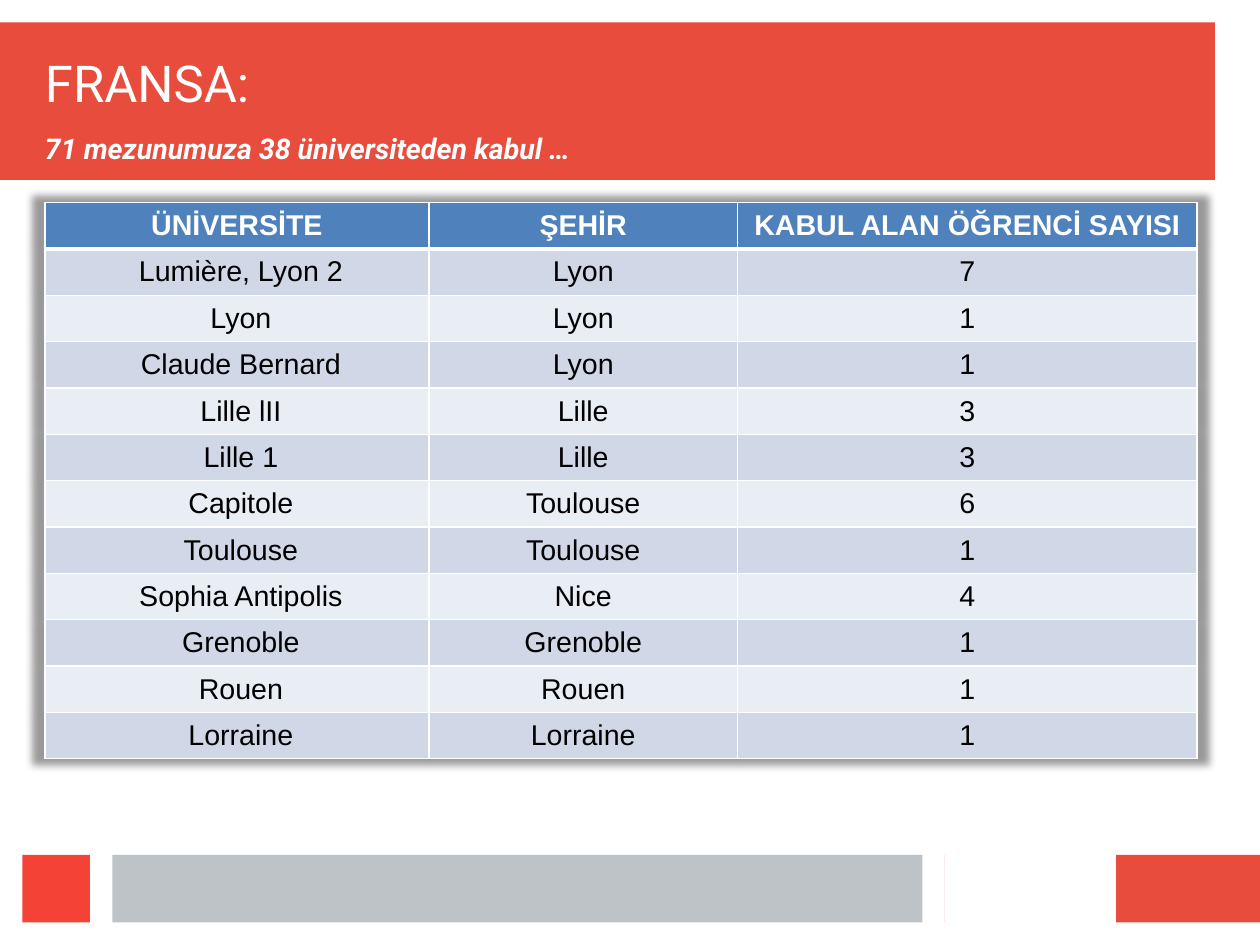
from dataclasses import dataclass

from lxml.etree import SubElement
from pptx import Presentation
from pptx.dml.color import RGBColor
from pptx.enum.shapes import MSO_SHAPE
from pptx.enum.text import MSO_ANCHOR, MSO_AUTO_SIZE, PP_ALIGN
from pptx.oxml.ns import qn
from pptx.util import Cm, Pt

COUNTRY = "FRANSA:"
SUMMARY = "71 mezunumuza 38 üniversiteden kabul …"
HEADINGS = ("ÜNİVERSİTE", "ŞEHİR", "KABUL ALAN ÖĞRENCİ SAYISI")
ADMISSIONS = [
    ("Lumière, Lyon 2", "Lyon", 7),
    ("Lyon", "Lyon", 1),
    ("Claude Bernard", "Lyon", 1),
    ("Lille lII", "Lille", 3),
    ("Lille 1", "Lille", 3),
    ("Capitole", "Toulouse", 6),
    ("Toulouse", "Toulouse", 1),
    ("Sophia Antipolis", "Nice", 4),
    ("Grenoble", "Grenoble", 1),
    ("Rouen", "Rouen", 1),
    ("Lorraine", "Lorraine", 1),
]


@dataclass(frozen=True)
class Theme:
    band: str = "E74C3C"
    square: str = "F44336"
    footer: str = "BDC3C7"
    white: str = "FFFFFF"
    black: str = "000000"
    heading_fill: str = "4F81BD"
    row_fills: tuple = ("D0D8E8", "E9EDF4")
    title_font: str = "Roboto"
    table_font: str = "Arial"
    title_size: int = 32
    body_size: int = 18


THEME = Theme()

# left, top, width, height in centimetres, then colour
BLOCKS = [
    (0, 0.5, 27, 3.5, THEME.band),
    (21, 19, 7, 1.5, THEME.band),
    (2.5, 19, 18, 1.5, THEME.footer),
    (0.5, 19, 1.5, 1.5, THEME.square),
    (21, 18.95, 3.8, 1.6, THEME.white),
]
MARGIN = 1
TEXT_WIDTH = 26
COLUMN_WIDTHS = (8.53, 6.86, 10.21)
ROW_HEIGHT = 1.03


def add_run(paragraph, text, font, size, color, bold=False, italic=False):
    run = paragraph.add_run()
    run.text = text
    run.font.name, run.font.size = font, Pt(size)
    run.font.bold, run.font.italic = bold, italic
    run.font.color.rgb = RGBColor.from_string(color)


def add_block(slide, left, top, width, height, color):
    block = slide.shapes.add_shape(
        MSO_SHAPE.RECTANGLE, Cm(left), Cm(top), Cm(width), Cm(height))
    block.shadow.inherit = False
    block.fill.solid()
    block.fill.fore_color.rgb = RGBColor.from_string(color)
    block.line.fill.background()


def fill_heading(shape, top, height, anchor, text, size, **style):
    """Place a band heading, strip its insets and write its text."""
    shape.left, shape.top = Cm(MARGIN), Cm(top)
    shape.width, shape.height = Cm(TEXT_WIDTH), Cm(height)
    frame = shape.text_frame
    frame.word_wrap = True
    frame.auto_size = MSO_AUTO_SIZE.NONE
    frame.vertical_anchor = anchor
    frame.margin_left = frame.margin_top = frame.margin_right = frame.margin_bottom = 0
    paragraph = frame.paragraphs[0]
    paragraph.alignment = PP_ALIGN.LEFT
    add_run(paragraph, text, THEME.title_font, size, THEME.white, **style)


def add_solid_color(parent, color):
    fill = SubElement(parent, qn("a:solidFill"))
    return SubElement(fill, qn("a:srgbClr"), val=color)


def add_borders(cell, widths):
    properties = cell._tc.get_or_add_tcPr()
    for side, width in widths.items():
        line = SubElement(properties, qn(f"a:ln{side}"), w=str(Pt(width)))
        add_solid_color(line, THEME.white)


def add_table_shadow(table):
    properties = table._tbl.tblPr
    effects = SubElement(properties, qn("a:effectLst"))
    properties.insert(0, effects)
    shadow = SubElement(effects, qn("a:outerShdw"), blurRad=str(Pt(5)),
                        sx="102000", sy="102000", algn="ctr", rotWithShape="0")
    color = SubElement(shadow, qn("a:srgbClr"), val=THEME.black)
    SubElement(color, qn("a:alpha"), val="40000")


def add_admissions_table(slide):
    rows = [HEADINGS, *ADMISSIONS]
    table = slide.shapes.add_table(
        len(rows), len(HEADINGS), Cm(MARGIN), Cm(4.5),
        Cm(sum(COLUMN_WIDTHS)), Cm(ROW_HEIGHT * len(rows))).table
    add_table_shadow(table)
    for column, width in zip(table.columns, COLUMN_WIDTHS):
        column.width = Cm(width)
    for r, values in enumerate(rows):
        is_heading = r == 0
        table.rows[r].height = Cm(ROW_HEIGHT)
        fill = THEME.heading_fill if is_heading else THEME.row_fills[(r - 1) % 2]
        borders = {"L": 1, "R": 1, "T": 3 if r == 1 else 1, "B": 3 if is_heading else 1}
        for c, value in enumerate(values):
            cell = table.cell(r, c)
            add_borders(cell, borders)
            cell.fill.solid()
            cell.fill.fore_color.rgb = RGBColor.from_string(fill)
            cell.vertical_anchor = MSO_ANCHOR.MIDDLE
            if c == 0 and not is_heading:
                cell.margin_left = Cm(0.43)
            paragraph = cell.text_frame.paragraphs[0]
            paragraph.alignment = PP_ALIGN.CENTER
            add_run(paragraph, str(value), THEME.table_font, THEME.body_size,
                    THEME.white if is_heading else THEME.black, bold=is_heading)


def main():
    deck = Presentation()
    deck.slide_width, deck.slide_height = Cm(28), Cm(21)
    slide = deck.slides.add_slide(deck.slide_layouts[5])
    for block in BLOCKS:
        add_block(slide, *block)

    title = slide.shapes.title
    title.element.getparent().append(title.element)  # above the red band
    fill_heading(title, 1, 1.5, MSO_ANCHOR.BOTTOM, COUNTRY, THEME.title_size)
    add_admissions_table(slide)
    summary = slide.shapes.add_textbox(0, 0, 0, 0)
    fill_heading(summary, 2.9, 1.2, MSO_ANCHOR.TOP, SUMMARY, THEME.body_size,
                 bold=True, italic=True)
    deck.save("out.pptx")


if __name__ == "__main__":
    main()
